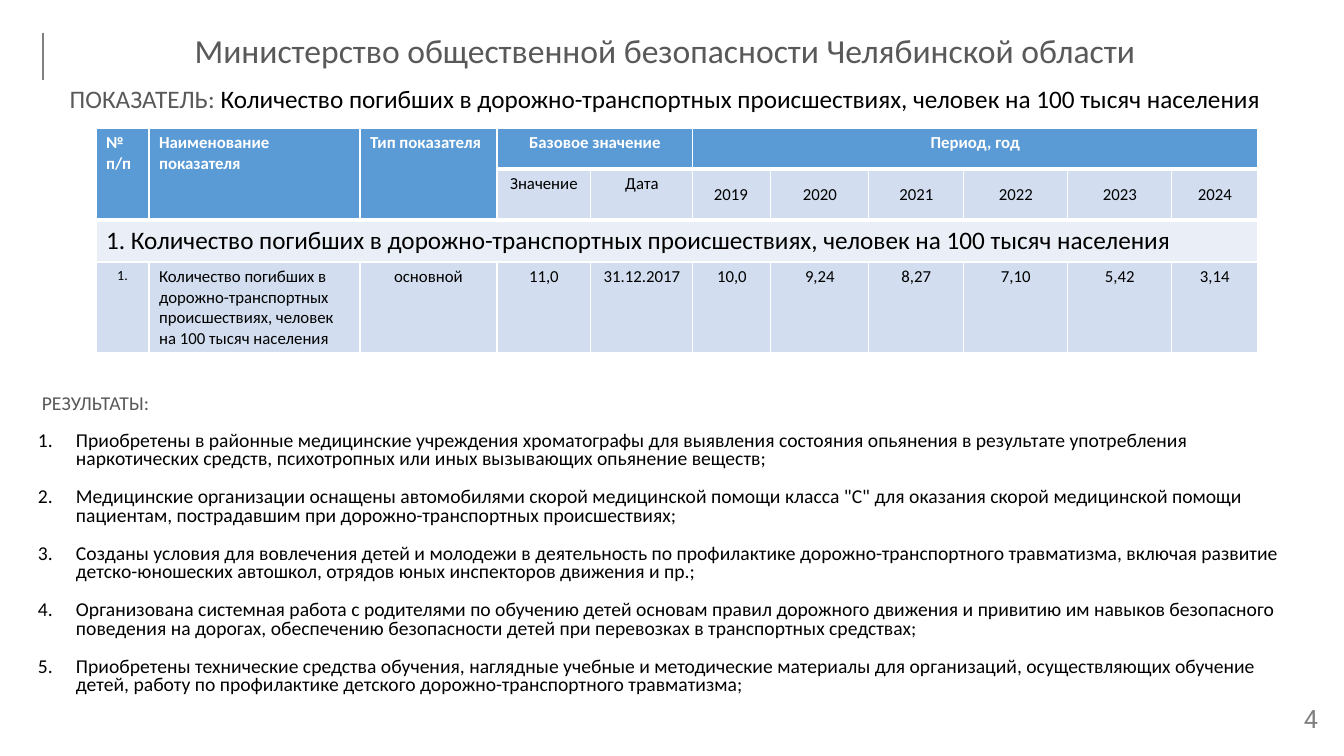
from lxml import etree
from pptx import Presentation
from pptx import util as u
from pptx.dml.color import RGBColor
from pptx.enum import shapes, text
from pptx.oxml import parse_xml
from pptx.oxml.ns import nsdecls, qn

SCALE = 914400 / 100.8
COLORS = {
    "white": "FFFFFF", "black": "000000", "heading": "595959", "muted": "808080",
    "header": "5B9BD5", "band": "D2DEEF", "section": "EAEFF7",
}
INDICATOR = "Количество погибших в дорожно-транспортных происшествиях, человек на 100 тысяч населения"
HEADERS = [(0, "№ п/п"), (1, "Наименование показателя"), (2, "Тип показателя"),
           (3, "Базовое значение"), (5, "Период, год")]
SUBHEADERS = ["Значение", "Дата", "2019", "2020", "2021", "2022", "2023", "2024"]
VALUES = ["1.", INDICATOR, "основной", "11,0", "31.12.2017",
          "10,0", "9,24", "8,27", "7,10", "5,42", "3,14"]
COLUMNS = [53, 211, 137, 94, 102, 78, 98, 95, 104, 104, 86]
ROWS = [41, 51, 42, 91]
MERGES = [(0, 0, 1, 0), (0, 1, 1, 1), (0, 2, 1, 2), (0, 3, 0, 4), (0, 5, 0, 10), (2, 0, 2, 10)]
RESULTS = [
    "Приобретены в районные медицинские учреждения хроматографы для выявления состояния опьянения в результате употребления наркотических средств, психотропных или иных вызывающих опьянение веществ;",
    "Медицинские организации оснащены автомобилями скорой медицинской помощи класса \"С\" для оказания скорой медицинской помощи пациентам, пострадавшим при дорожно-транспортных происшествиях;",
    "Созданы условия для вовлечения детей и молодежи в деятельность по профилактике дорожно-транспортного травматизма, включая развитие детско-юношеских автошкол, отрядов юных инспекторов движения и пр.;",
    "Организована системная работа с родителями по обучению детей основам правил дорожного движения и привитию им навыков безопасного поведения на дорогах, обеспечению безопасности детей при перевозках в транспортных средствах;",
    "Приобретены технические средства обучения, наглядные учебные и методические материалы для организаций, осуществляющих обучение детей, работу по профилактике детского дорожно-транспортного травматизма;",
]


def px(length):
    return u.Emu(round(length * SCALE))


def rgb(name):
    return RGBColor.from_string(COLORS[name])


def style_run(run, size, color, font="Calibri", bold=False):
    run.font.size = u.Pt(size)
    run.font.name = font
    run.font.bold = bold
    run.font.color.rgb = rgb(color)


def add_text(slide, box, paragraphs, size, color, font="Calibri", spacing=0.8, centered=True):
    frame = slide.shapes.add_textbox(*map(px, box)).text_frame
    frame.word_wrap = True
    frame.margin_top = frame.margin_bottom = 0
    frame.text = "\n".join(paragraphs)
    for paragraph in frame.paragraphs:
        paragraph.line_spacing = spacing
        paragraph.alignment = text.PP_ALIGN.CENTER if centered else text.PP_ALIGN.LEFT
        for run in paragraph.runs:
            style_run(run, size, color, font)
    return frame


def number_paragraphs(frame, indent, gap):
    for paragraph in frame.paragraphs:
        paragraph.space_after = u.Pt(gap)
        properties = paragraph._p.get_or_add_pPr()
        properties.set("marL", str(px(indent)))
        properties.set("indent", str(-px(indent)))
        etree.SubElement(properties, qn("a:buAutoNum"), type="arabicPeriod")


def add_accent(slide, x, top, bottom):
    accent = slide.shapes.add_connector(
        shapes.MSO_CONNECTOR.STRAIGHT, px(x), px(top), px(x), px(bottom))
    accent.line.color.rgb = rgb("muted")
    accent.line.width = u.Pt(1.5)
    etree.SubElement(accent._element.spPr, qn("a:effectLst"))


def paint_cell(cell, fill, bottom):
    cell.fill.solid()
    cell.fill.fore_color.rgb = rgb(fill)
    properties = cell._tc.get_or_add_tcPr()
    for position, (side, width) in enumerate([("L", 1), ("R", 1), ("T", 1), ("B", bottom)]):
        properties.insert(position, parse_xml(
            f'<a:ln{side} {nsdecls("a")} w="{u.Pt(width)}"><a:solidFill>'
            f'<a:srgbClr val="{COLORS["white"]}"/></a:solidFill></a:ln{side}>'))


def write_cell(cell, content, size=12, color="black", bold=False, centered=True):
    cell.text = content
    paragraph = cell.text_frame.paragraphs[0]
    paragraph.alignment = text.PP_ALIGN.CENTER if centered else text.PP_ALIGN.LEFT
    style_run(paragraph.runs[0], size, color, bold=bold)


def add_indicator_table(slide, left, top):
    table = slide.shapes.add_table(len(ROWS), len(COLUMNS), px(left), px(top),
                                   px(sum(COLUMNS)), px(sum(ROWS))).table
    table.first_row = table.horz_banding = False
    for column, width in zip(table.columns, COLUMNS):
        column.width = px(width)
    for row, height in zip(table.rows, ROWS):
        row.height = px(height)

    for r in range(len(ROWS)):
        for c in range(len(COLUMNS)):
            is_header = r == 0 or (r == 1 and c < 3)
            fill = "header" if is_header else "section" if r == 2 else "band"
            paint_cell(table.cell(r, c), fill, 3 if r < 2 else 1)
    for first_row, first_col, last_row, last_col in MERGES:
        table.cell(first_row, first_col).merge(table.cell(last_row, last_col))

    for c, header in HEADERS:
        write_cell(table.cell(0, c), header, color="white", bold=True, centered=c > 2)
    for c, subheader in enumerate(SUBHEADERS, 3):
        cell = table.cell(1, c)
        write_cell(cell, subheader)
        if c > 4:
            cell.vertical_anchor = text.MSO_ANCHOR.MIDDLE
            cell.margin_left = px(0 if c == 5 else 2)
            cell.margin_right = px(2)
    write_cell(table.cell(2, 0), "1. " + INDICATOR, size=18, centered=False)
    for c, value in enumerate(VALUES):
        write_cell(table.cell(3, c), value, size=10 if c == 0 else 12, centered=c != 1)


def main():
    deck = Presentation()
    deck.slide_width, deck.slide_height = px(1344), px(756)
    slide = deck.slides.add_slide(deck.slide_layouts[6])

    add_accent(slide, 43, 33, 80)
    add_text(slide, (28, 34, 1274, 37),
             ["Министерство общественной безопасности Челябинской области"],
             24, "heading", spacing=0.9)
    indicator = add_text(slide, (28, 89, 1274, 25), ["ПОКАЗАТЕЛЬ: "], 18, "heading")
    indicator_name = indicator.paragraphs[0].add_run()
    indicator_name.text = INDICATOR
    style_run(indicator_name, 18, "black")

    add_indicator_table(slide, 96, 128)

    add_text(slide, (32, 395, 1270, 20), ["РЕЗУЛЬТАТЫ:"], 14, "heading", centered=False)
    results = add_text(slide, (28, 432, 1274, 264), RESULTS, 14, "black", centered=False)
    number_paragraphs(results, 38, 13.5)

    page_number = add_text(slide, (1278, 696, 66, 50), ["4"], 18, "muted", font="Roboto")
    page_number.vertical_anchor = text.MSO_ANCHOR.MIDDLE
    deck.save("out.pptx")


if __name__ == "__main__":
    main()
